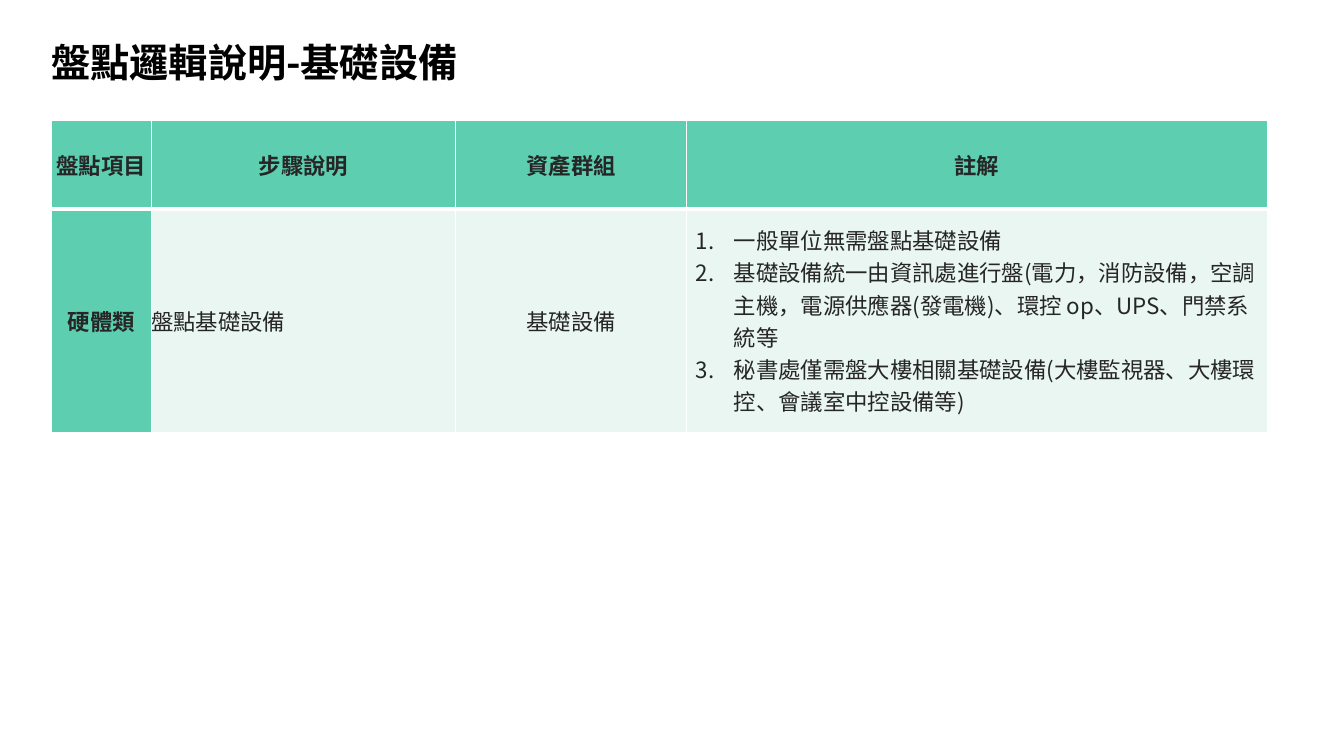
from dataclasses import dataclass

from lxml import etree
from pptx import Presentation
from pptx.dml.color import RGBColor
from pptx.enum import text
from pptx.oxml import ns
from pptx.util import Inches, Pt


@dataclass(frozen=True)
class Theme:
    font: str = "Noto Sans CJK SC"
    title_size: int = 28
    body_size: int = 16
    title: str = "000000"
    ink: str = "262626"
    green: str = "5DCEAF"
    mint: str = "EAF6F2"
    border: str = "FFFFFF"


THEME = Theme()
HEADINGS = ["盤點項目", "步驟說明", "資產群組", "註解"]
NOTES = [
    "一般單位無需盤點基礎設備",
    "基礎設備統一由資訊處進行盤(電力，消防設備，空調主機，電源供應器(發電機)、環控 op、UPS、門禁系統等",
    "秘書處僅需盤大樓相關基礎設備(大樓監視器、大樓環控、會議室中控設備等)",
]
ROWS = [HEADINGS, ["硬體類", "盤點基礎設備", "基礎設備", "\n".join(NOTES)]]
COLUMN_WIDTHS = [0.99, 3.02, 2.29, 5.76]
ROW_HEIGHTS = [0.88, 2.22]


def style_paragraph(para, size, color, bold):
    """Set the type for both Latin and East Asian characters."""
    font = para.font
    font.name, font.size, font.bold = THEME.font, Pt(size), bold
    font.color.rgb = RGBColor.from_string(color)
    latin = para._p.pPr.find(".//" + ns.qn("a:latin"))
    east_asian = etree.Element(ns.qn("a:ea"), typeface=THEME.font)
    latin.addnext(east_asian)


def add_borders(cell, bottom_width):
    properties = cell._tc.get_or_add_tcPr()
    widths = {"lnL": 1, "lnR": 1, "lnT": 1, "lnB": bottom_width}
    for index, (side, width) in enumerate(widths.items()):
        line = etree.Element(ns.qn("a:" + side), w=str(Pt(width)))
        fill = etree.SubElement(line, ns.qn("a:solidFill"))
        etree.SubElement(fill, ns.qn("a:srgbClr"), val=THEME.border)
        properties.insert(index, line)


deck = Presentation()
deck.slide_width, deck.slide_height = Inches(13.33), Inches(7.5)
page = deck.slides.add_slide(deck.slide_layouts[5])

title = page.shapes.title
title.left, title.top = Inches(0.51), Inches(0.46)
title.width, title.height = Inches(12.31), Inches(0.37)
frame = title.text_frame
frame.text = "盤點邏輯說明-基礎設備"
frame.margin_left = frame.margin_right = frame.margin_top = frame.margin_bottom = 0
frame.vertical_anchor = text.MSO_ANCHOR.MIDDLE
frame.auto_size = text.MSO_AUTO_SIZE.NONE
heading = frame.paragraphs[0]
heading.alignment = text.PP_ALIGN.LEFT
heading.line_spacing = 0.9
style_paragraph(heading, THEME.title_size, THEME.title, True)

table = page.shapes.add_table(
    len(ROWS), len(HEADINGS), Inches(0.51), Inches(1.19),
    Inches(sum(COLUMN_WIDTHS)), Inches(sum(ROW_HEIGHTS)),
).table
for column, width in zip(table.columns, COLUMN_WIDTHS):
    column.width = Inches(width)
for row, height in zip(table.rows, ROW_HEIGHTS):
    row.height = Inches(height)

for row_index, row in enumerate(ROWS):
    for column_index, content in enumerate(row):
        is_header = row_index == 0 or column_index == 0
        is_centred = is_header or column_index == 2
        cell = table.cell(row_index, column_index)
        cell.text = content
        cell.vertical_anchor = text.MSO_ANCHOR.MIDDLE
        cell.margin_left = cell.margin_right = cell.margin_top = cell.margin_bottom = 0
        cell.fill.solid()
        cell.fill.fore_color.rgb = RGBColor.from_string(
            THEME.green if is_header else THEME.mint
        )
        add_borders(cell, 3 if row_index == 0 else 1)
        for para in cell.text_frame.paragraphs:
            para.alignment = text.PP_ALIGN.CENTER if is_centred else text.PP_ALIGN.LEFT
            style_paragraph(para, THEME.body_size, THEME.ink, is_header)

for para in table.cell(1, 3).text_frame.paragraphs:
    properties = para._p.get_or_add_pPr()
    properties.set("marL", str(Inches(0.47)))
    properties.set("indent", str(Inches(-0.38)))
    number = etree.Element(ns.qn("a:buAutoNum"), type="arabicPeriod")
    properties.find(ns.qn("a:defRPr")).addprevious(number)

deck.save("out.pptx")
